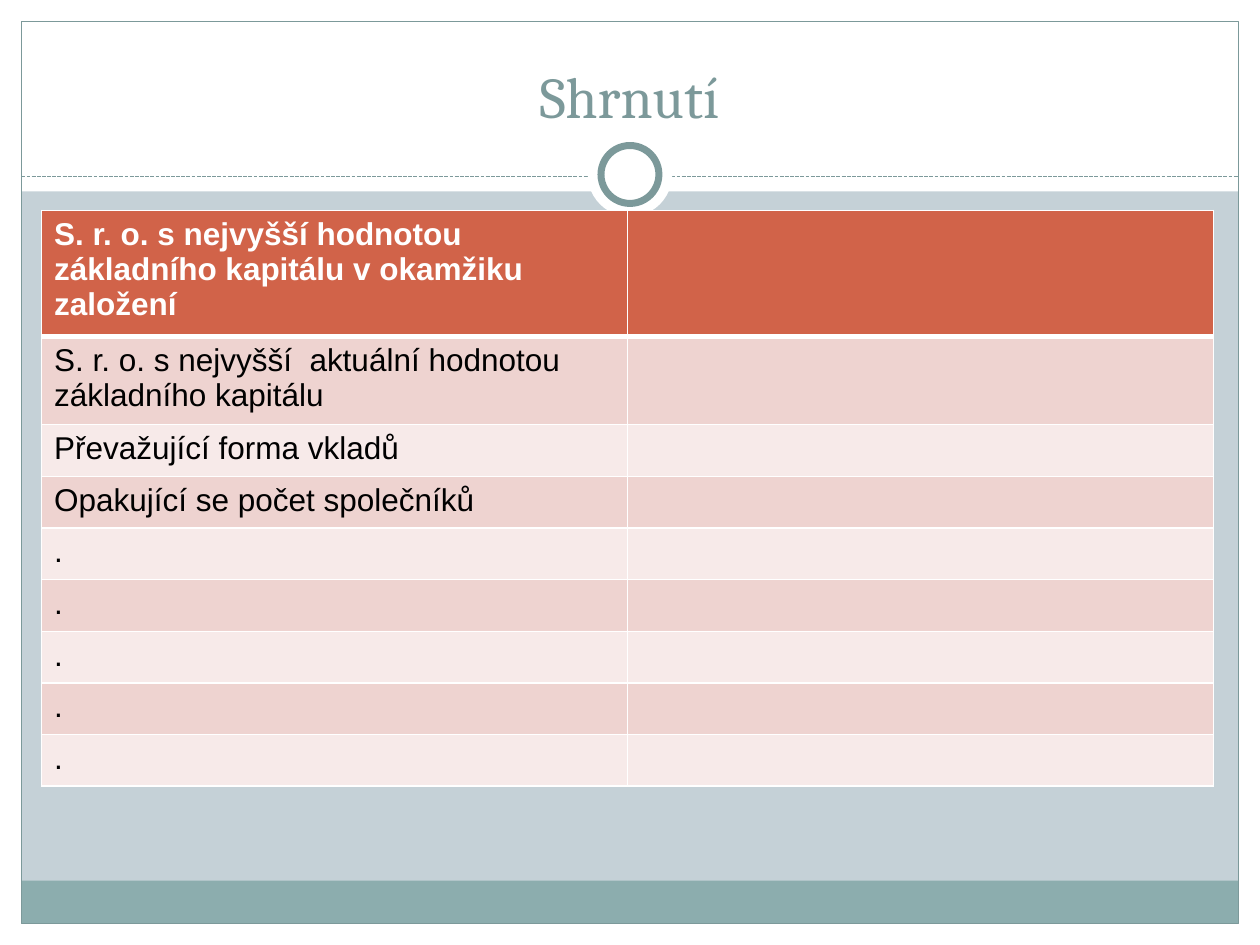
from dataclasses import dataclass

from lxml import etree
from pptx import Presentation
from pptx.dml.color import RGBColor
from pptx.enum.dml import MSO_LINE
from pptx.enum.shapes import MSO_CONNECTOR, MSO_SHAPE
from pptx.enum.text import MSO_ANCHOR, PP_ALIGN
from pptx.oxml.ns import qn
from pptx.util import Inches, Pt

RECT, OVAL = MSO_SHAPE.RECTANGLE, MSO_SHAPE.OVAL
STRAIGHT, DASH = MSO_CONNECTOR.STRAIGHT, MSO_LINE.SQUARE_DOT
BOTTOM, CENTER = MSO_ANCHOR.BOTTOM, PP_ALIGN.CENTER


@dataclass(frozen=True)
class Theme:
    background: str = "C5D1D7"
    white: str = "FFFFFF"
    black: str = "000000"
    accent: str = "7C999A"
    footer: str = "8CADAE"
    header: str = "D16349"
    bands: tuple = ("EED3D0", "F7EAE9")
    title_font: str = "Cambria"
    body_font: str = "Arial"
    title_size: int = 33
    body_size: int = 18


THEME = Theme()
ROWS = [
    "S. r. o. s nejvyšší hodnotou základního kapitálu v okamžiku založení",
    "S. r. o. s nejvyšší  aktuální hodnotou základního kapitálu",
    "Převažující forma vkladů",
    "Opakující se počet společníků",
] + ["."] * 5


def rgb(value):
    return RGBColor.from_string(value)


def add_run(p, text, font, size, color, bold=False):
    r = p.add_run()
    r.text = text
    r.font.name, r.font.size, r.font.bold = font, Pt(size), bold
    r.font.color.rgb = rgb(color)


def add_shape(slide, kind, box, fill=None, line=None, weight=0.75):
    sp = slide.shapes.add_shape(kind, *map(Inches, box))
    sp.shadow.inherit = False
    if fill:
        sp.fill.solid()
        sp.fill.fore_color.rgb = rgb(fill)
    else:
        sp.fill.background()
    if line:
        sp.line.color.rgb = rgb(line)
        sp.line.width = Pt(weight)
    else:
        sp.line.fill.background()


def add_frame(slide, box, margin=0.17):
    x, y, w, h = box
    inner_w, inner_h = w - 2 * margin, h - 2 * margin
    # White margins and title band
    for band in ((x, y + h - margin, w, margin), (x, y, w, 1.52),
                 (x, y, margin, h), (x + w - margin, y, margin, h)):
        add_shape(slide, RECT, band, THEME.white)
    # Footer band and outline
    add_shape(slide, RECT, (x + margin, y + h - margin - 0.34, inner_w, 0.34), THEME.footer)
    add_shape(slide, RECT, (x + margin, y + margin, inner_w, inner_h), line=THEME.accent)


def add_divider(slide, box):
    x, y, w, h = box
    # Dashed rule
    rule_y = Inches(y + 0.35)
    rule = slide.shapes.add_connector(STRAIGHT, Inches(x), rule_y, Inches(x + w), rule_y)
    rule.line.color.rgb = rgb(THEME.accent)
    rule.line.width = Pt(0.75)
    rule.line.dash_style = DASH
    etree.SubElement(rule._element.spPr, qn("a:effectLst"))
    # Ring on a white disc
    mid_x, mid_y = x + w / 2, y + h / 2
    for size, line in ((h, None), (0.46, THEME.accent)):
        disc = (mid_x - size / 2, mid_y - size / 2, size, size)
        add_shape(slide, OVAL, disc, THEME.white, line, 4)


def add_title(slide, box, text):
    tf = slide.shapes.add_textbox(*map(Inches, box)).text_frame
    tf.word_wrap = True
    tf.vertical_anchor = BOTTOM
    p = tf.paragraphs[0]
    p.alignment = CENTER
    add_run(p, text, THEME.title_font, THEME.title_size, THEME.accent)


def set_borders(cell, widths):
    # Borders come before the fill in the cell properties
    tc_pr = cell._tc.get_or_add_tcPr()
    for i, (side, width) in enumerate(widths.items()):
        ln = etree.Element(qn(f"a:ln{side}"), w=str(Pt(width)))
        fill = etree.SubElement(ln, qn("a:solidFill"))
        etree.SubElement(fill, qn("a:srgbClr"), val=THEME.white)
        tc_pr.insert(i, ln)


def add_summary_table(slide, box, rows, row_h=0.41):
    x, y, w, _ = box
    frame = slide.shapes.add_table(len(rows), 2, *map(Inches, (x, y, w, row_h * len(rows))))
    table = frame.table
    for col in table.columns:
        col.width = Inches(w / 2)
    for i, text in enumerate(rows):
        table.rows[i].height = Inches(row_h)
        is_header = i == 0
        fill = THEME.header if is_header else THEME.bands[(i - 1) % 2]
        color = THEME.white if is_header else THEME.black
        for cell in table.rows[i].cells:
            cell.fill.solid()
            cell.fill.fore_color.rgb = rgb(fill)
            set_borders(cell, {"L": 1, "R": 1, "T": 3 if i == 1 else 1,
                               "B": 3 if is_header else 1})
        add_run(table.cell(i, 0).text_frame.paragraphs[0], text,
                THEME.body_font, THEME.body_size, color, is_header)


def main():
    prs = Presentation()
    prs.slide_width, prs.slide_height = Inches(10), Inches(7.5)
    slide = prs.slides.add_slide(prs.slide_layouts[6])
    slide.background.fill.solid()
    slide.background.fill.fore_color.rgb = rgb(THEME.background)

    add_frame(slide, (0, 0, 10, 7.5))
    add_divider(slide, (0.17, 1.05, 9.66, 0.67))
    add_title(slide, (0.33, 0.25, 9.33, 0.83), "Shrnutí")
    add_summary_table(slide, (0.33, 1.67, 9.3, 4.54), ROWS)
    prs.save("out.pptx")


if __name__ == "__main__":
    main()
